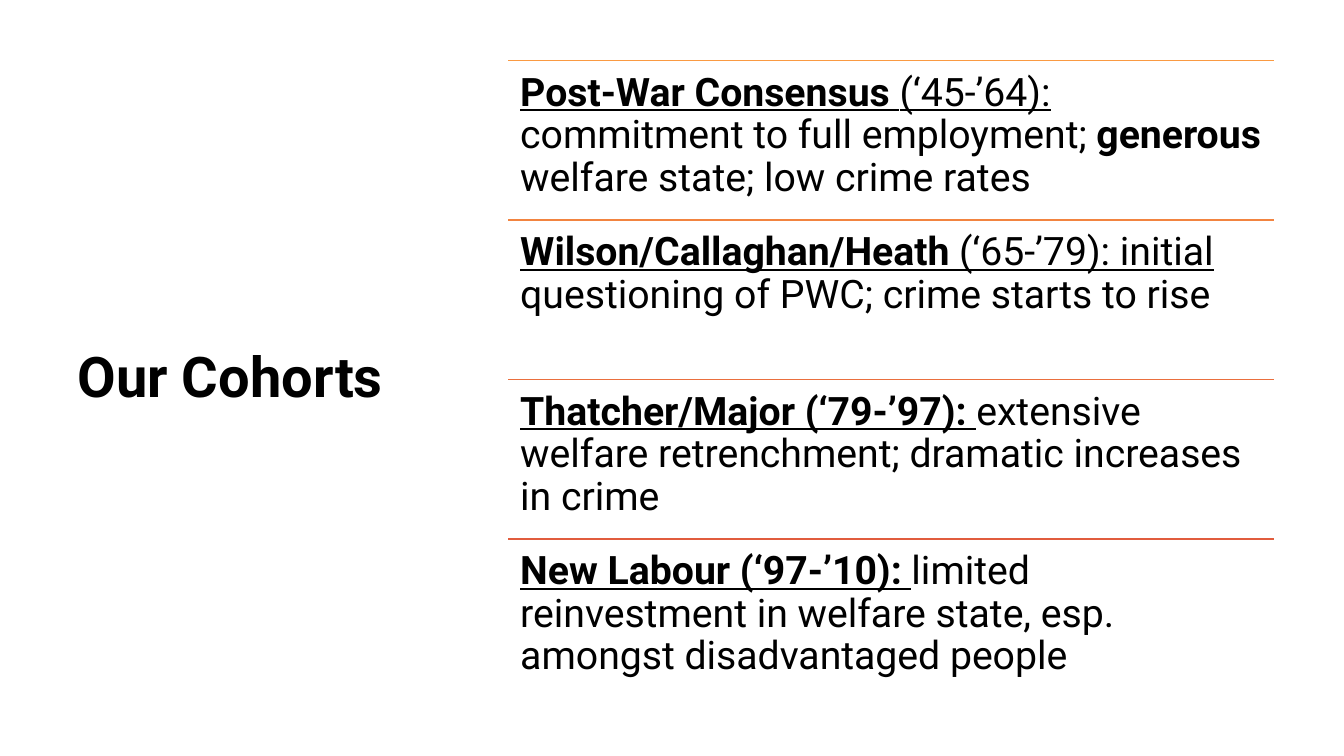
from lxml import etree
from pptx import Presentation
from pptx.dml.color import RGBColor
from pptx.enum.shapes import MSO_CONNECTOR
from pptx.enum.text import MSO_ANCHOR, MSO_AUTO_SIZE, PP_ALIGN
from pptx.oxml.ns import qn
from pptx.util import Inches, Pt

FONT = "Roboto"
INK = "000000"

# Each cohort: rule colour, then runs of (text, bold, underlined)
COHORTS = [
    ("FA9A42", [("Post-War Consensus ", True, True),
                ("(‘45-’64): ", False, True),
                ("commitment to full employment; ", False, False),
                ("generous", True, False),
                (" welfare state; low crime rates", False, False)]),
    ("F28440", [("Wilson/Callaghan/Heath ", True, True),
                ("(‘65-’79): initial ", False, True),
                ("questioning of PWC; crime starts to rise", False, False)]),
    ("EA6F3E", [("Thatcher/Major (‘79-’97): ", True, True),
                ("extensive welfare retrenchment; dramatic increases in crime",
                 False, False)]),
    ("E15C3D", [("New Labour (‘97-’10): ", True, True),
                ("limited reinvestment in welfare state, esp. amongst "
                 "disadvantaged people", False, False)]),
]


def color(code):
    return RGBColor.from_string(code)


def style(run, size, bold, under=False):
    font = run.font
    font.name = FONT
    font.size = Pt(size)
    font.bold = bold
    font.underline = under
    font.color.rgb = color(INK)


def add_title(slide, left, top, width, height):
    title = slide.shapes.title
    title.left, title.top = Inches(left), Inches(top)
    title.width, title.height = Inches(width), Inches(height)
    frame = title.text_frame
    frame.text = "Our Cohorts"
    frame.word_wrap = True
    frame.auto_size = MSO_AUTO_SIZE.NONE
    frame.vertical_anchor = MSO_ANCHOR.MIDDLE
    para = frame.paragraphs[0]
    para.alignment = PP_ALIGN.LEFT
    para.line_spacing = 0.9
    style(para.runs[0], 40, True)


def add_rule(slide, left, top, width, code):
    rule = slide.shapes.add_connector(
        MSO_CONNECTOR.STRAIGHT, Inches(left), Inches(top),
        Inches(left + width), Inches(top))
    rule.line.color.rgb = color(code)
    rule.line.width = Pt(1)
    etree.SubElement(rule._element.spPr, qn("a:effectLst"))


def add_text(slide, left, top, width, height, runs):
    box = slide.shapes.add_textbox(
        Inches(left), Inches(top), Inches(width), Inches(height))
    frame = box.text_frame
    frame.word_wrap = True
    frame.margin_left = frame.margin_right = Inches(0.12)
    frame.margin_top = frame.margin_bottom = Inches(0.12)
    para = frame.paragraphs[0]
    para.line_spacing = 0.9
    for text, bold, under in runs:
        run = para.add_run()
        run.text = text
        style(run, 28, bold, under)


def add_list(slide, left, top, width, height):
    """Split the box into equal rows, each a rule with text below it."""
    step = height / len(COHORTS)
    for i, (code, runs) in enumerate(COHORTS):
        row = top + i * step
        add_rule(slide, left, row, width, code)
        add_text(slide, left, row, width, step, runs)


def main():
    deck = Presentation()
    deck.slide_width = Inches(13.33)
    deck.slide_height = Inches(7.5)
    slide = deck.slides.add_slide(deck.slide_layouts[5])
    add_title(slide, 0.67, 0.6, 3.82, 6.33)
    add_list(slide, 5.04, 0.6, 7.6, 6.33)
    deck.save("out.pptx")


if __name__ == "__main__":
    main()
